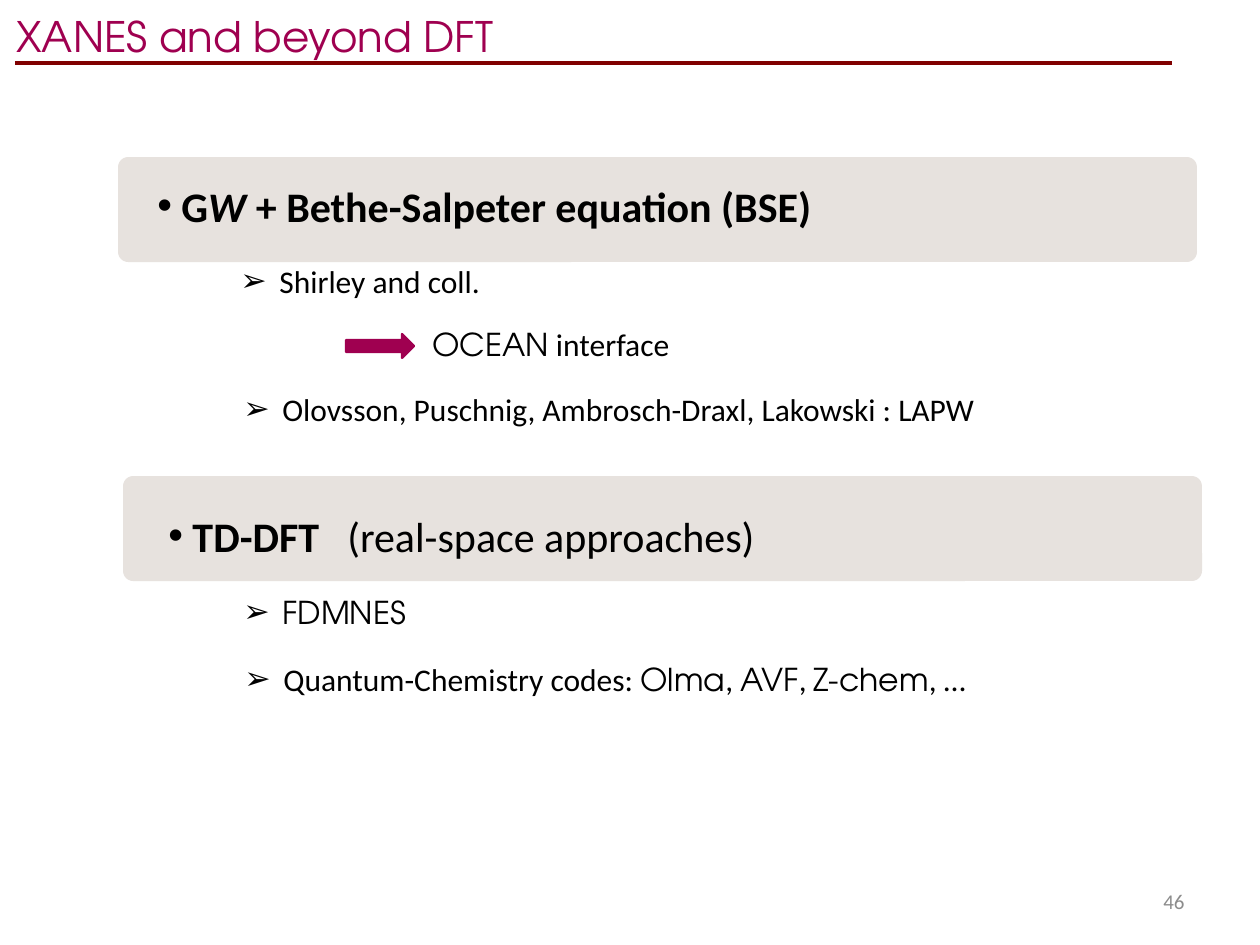
from lxml import etree
from pptx import Presentation, util as u
from pptx.dml.color import RGBColor
from pptx.enum import shapes, text
from pptx.oxml.ns import qn

HEX = {"plum": "9F0050", "rule": "800000", "panel": "947C69",
       "black": "000000", "grey": "8C8C8C"}
SANS, GEO = "Calibri", "TeX Gyre Adventor"


def px(n):
    return u.Emu(round(n * 914400 / 126))


def color(name):
    return RGBColor.from_string(HEX[name])


class Deck:
    def __init__(self, wide, high):
        self.prs = Presentation()
        self.prs.slide_width, self.prs.slide_height = px(wide), px(high)
        self.slide = self.prs.slides.add_slide(self.prs.slide_layouts[6])

    def shape(self, kind, box, fill, alpha=None, adj=None, line=None):
        item = self.slide.shapes.add_shape(kind, *map(px, box))
        item.shadow.inherit = False
        item.fill.solid()
        item.fill.fore_color.rgb = color(fill)
        if alpha:
            tone = item.fill._xPr.find(".//" + qn("a:srgbClr"))
            etree.SubElement(tone, qn("a:alpha"), val=str(alpha * 1000))
        if adj:
            item.adjustments[0] = adj
        if line:
            item.line.color.rgb = color(fill)
            item.line.width = u.Pt(line)
        else:
            item.line.fill.background()

    def rule(self, x1, x2, y):
        line = self.slide.shapes.add_connector(
            shapes.MSO_CONNECTOR.STRAIGHT, px(x1), px(y), px(x2), px(y))
        line.line.color.rgb = color("rule")
        line.line.width = u.Pt(2)
        etree.SubElement(line._element.spPr, qn("a:effectLst"))

    def text(self, box, runs, size, tint="black", bullet=None, hang=0,
             tab=None, right=False):
        """Each run is (words, font, style); style holds "b" and/or "i"."""
        frame = self.slide.shapes.add_textbox(*map(px, box)).text_frame
        frame.word_wrap = True
        para = frame.paragraphs[0]
        if right:
            para.alignment = text.PP_ALIGN.RIGHT
            frame.vertical_anchor = text.MSO_ANCHOR.MIDDLE
        props = para._p.get_or_add_pPr()
        if bullet:
            props.set("marL", str(px(hang)))
            props.set("indent", str(-px(hang)))
            etree.SubElement(props, qn("a:buFont"), typeface="Arial")
            etree.SubElement(props, qn("a:buChar"), char=bullet)
        if tab:
            tabs = etree.SubElement(props, qn("a:tabLst"))
            etree.SubElement(tabs, qn("a:tab"), pos=str(px(tab)), algn="l")
        para.font.size = u.Pt(size)
        para.font.color.rgb = color(tint)
        for words, font, style in runs:
            run = para.add_run()
            run.text = words
            run.font.name = font
            run.font.size = u.Pt(size)
            run.font.color.rgb = color(tint)
            run.font.bold = "b" in style
            run.font.italic = "i" in style

    def panel(self, x, y):
        self.shape(shapes.MSO_SHAPE.ROUNDED_RECTANGLE, (x, y, 1079, 105),
                   "panel", alpha=22, adj=0.097)

    def head(self, x, y, wide, runs, tab=None):
        self.text((x, y, wide, 63), runs, 24, bullet="•", tab=tab)

    def point(self, x, y, wide, *runs):
        self.text((x, y, wide, 50), [(*run, "") for run in runs], 18,
                  bullet="➢", hang=39)


def main():
    deck = Deck(1260, 945)

    # Title
    deck.text((4, 4, 520, 63), [("XANES and beyond DFT", GEO, "")], 24, "plum")
    deck.rule(15, 1172, 63)

    # Bethe-Salpeter part
    deck.panel(118, 157)
    deck.head(145, 174, 694, [(" G", SANS, "b"), ("W", SANS, "bi"),
                              (" + Bethe-Salpeter equation (BSE)", SANS, "b")])
    deck.point(228, 256, 675, ("Shirley and coll.", SANS))
    deck.shape(shapes.MSO_SHAPE.RIGHT_ARROW, (346, 334, 68, 24), "plum",
               line=1.25)
    deck.text((420, 319, 782, 50),
              [("OCEAN", GEO, ""), (" interface", SANS, "")], 18)
    deck.point(231, 384, 777,
               ("Olovsson, Puschnig, Ambrosch-Draxl, Lakowski : LAPW", SANS))

    # TD-DFT part
    deck.panel(123, 476)
    deck.head(156, 504, 627, [(" TD-DFT", SANS, "b"),
                              ("\t(real-space approaches)", SANS, "")], tab=179)
    deck.point(231, 587, 198, ("FDMNES", GEO))
    deck.point(232, 654, 772, ("Quantum-Chemistry codes: ", SANS),
               ("Olma", GEO), (", ", SANS), ("AVF", GEO), (", ", SANS),
               ("Z-chem", GEO), (", …", SANS))

    # Page number
    deck.text((903, 876, 294, 50), [("46", SANS, "")], 12, "grey", right=True)

    deck.prs.save("out.pptx")


if __name__ == "__main__":
    main()
